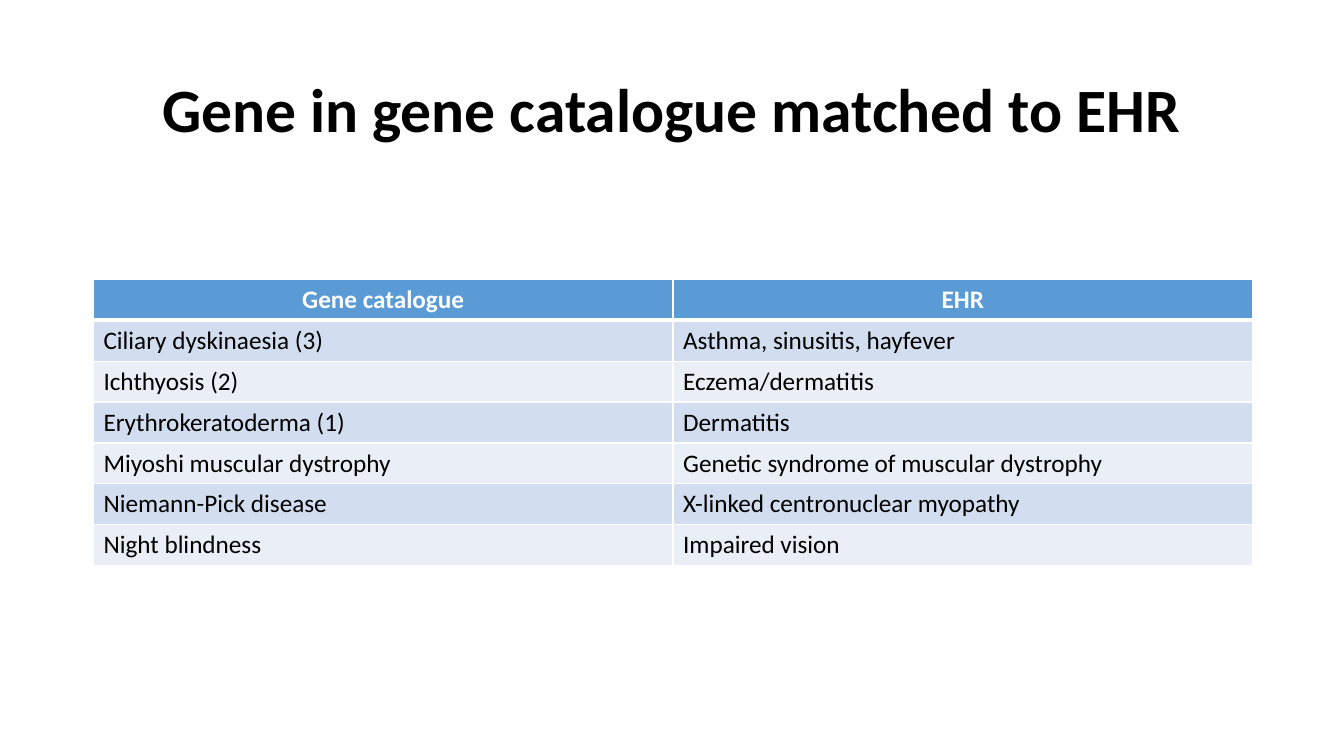
from dataclasses import dataclass

from lxml.etree import SubElement
from pptx import Presentation
from pptx.dml.color import RGBColor
from pptx.enum.text import MSO_ANCHOR as Anchor, PP_ALIGN as Align
from pptx.oxml.ns import qn
from pptx.slide import Slide
from pptx.table import _Cell as Cell
from pptx.text.text import _Paragraph as Paragraph
from pptx.util import Pt

PX = 9525  # EMU per px, 96 px to the inch
WHITE, BLACK, BLUE = "FFFFFF", "000000", "5B9BD5"
BANDS = ("D2DEEF", "EAEFF7")
ROW_HEIGHT, COLUMN_WIDTH = 39, 552
THIN, THICK = 1, 3  # border widths in points


@dataclass(frozen=True)
class Match:
    catalogue: str
    ehr: str


HEADING = Match("Gene catalogue", "EHR")
MATCHES = [
    Match("Ciliary dyskinaesia (3)", "Asthma, sinusitis, hayfever"),
    Match("Ichthyosis (2)", "Eczema/dermatitis"),
    Match("Erythrokeratoderma (1)", "Dermatitis"),
    Match("Miyoshi muscular dystrophy", "Genetic syndrome of muscular dystrophy"),
    Match("Niemann-Pick disease", "X-linked centronuclear myopathy"),
    Match("Night blindness", "Impaired vision"),
]


def px(length: int) -> int:
    return length * PX


def colour(value: str) -> RGBColor:
    return RGBColor.from_string(value)


def write(paragraph: Paragraph, text: str, size: int, ink: str, bold: bool, align: Align) -> None:
    run = paragraph.add_run()
    run.text = text
    paragraph.alignment = align
    for key, value in {"name": "Calibri", "size": Pt(size), "bold": bold}.items():
        setattr(run.font, key, value)
    run.font.color.rgb = colour(ink)


def add_borders(cell: Cell, top: int, bottom: int) -> None:
    properties = cell._tc.get_or_add_tcPr()
    for side, width in {"L": THIN, "R": THIN, "T": top, "B": bottom}.items():
        line = SubElement(properties, qn(f"a:ln{side}"), w=str(Pt(width)))
        SubElement(SubElement(line, qn("a:solidFill")), qn("a:srgbClr"), val=WHITE)


def add_title(slide: Slide) -> None:
    title = slide.shapes.title
    place = {"left": 88, "top": 38, "width": 1104, "height": 139}
    for key, value in place.items():
        setattr(title, key, px(value))
    title.text_frame.vertical_anchor = Anchor.MIDDLE
    paragraph = title.text_frame.paragraphs[0]
    paragraph.line_spacing = 0.9
    write(paragraph, "Gene in gene catalogue matched to EHR", 44, BLACK, True, Align.CENTER)


def add_matches(slide: Slide) -> None:
    rows = [HEADING, *MATCHES]
    table = slide.shapes.add_table(
        len(rows), 2, px(89), px(266), px(2 * COLUMN_WIDTH), px(ROW_HEIGHT * len(rows))
    ).table
    for number, match in enumerate(rows):
        table.rows[number].height = px(ROW_HEIGHT)
        heading = number == 0
        for column, text in enumerate((match.catalogue, match.ehr)):
            cell = table.cell(number, column)
            # Borders come before the fill in the cell properties
            add_borders(cell, THICK if number == 1 else THIN, THICK if heading else THIN)
            cell.fill.solid()
            cell.fill.fore_color.rgb = colour(BLUE if heading else BANDS[(number - 1) % 2])
            write(cell.text_frame.paragraphs[0], text, 18, WHITE if heading else BLACK,
                  heading, Align.CENTER if heading else Align.LEFT)


def main() -> None:
    deck = Presentation()
    deck.slide_width, deck.slide_height = px(1280), px(720)
    slide = deck.slides.add_slide(deck.slide_layouts[5])  # title only
    add_title(slide)
    add_matches(slide)
    deck.save("out.pptx")


if __name__ == "__main__":
    main()
